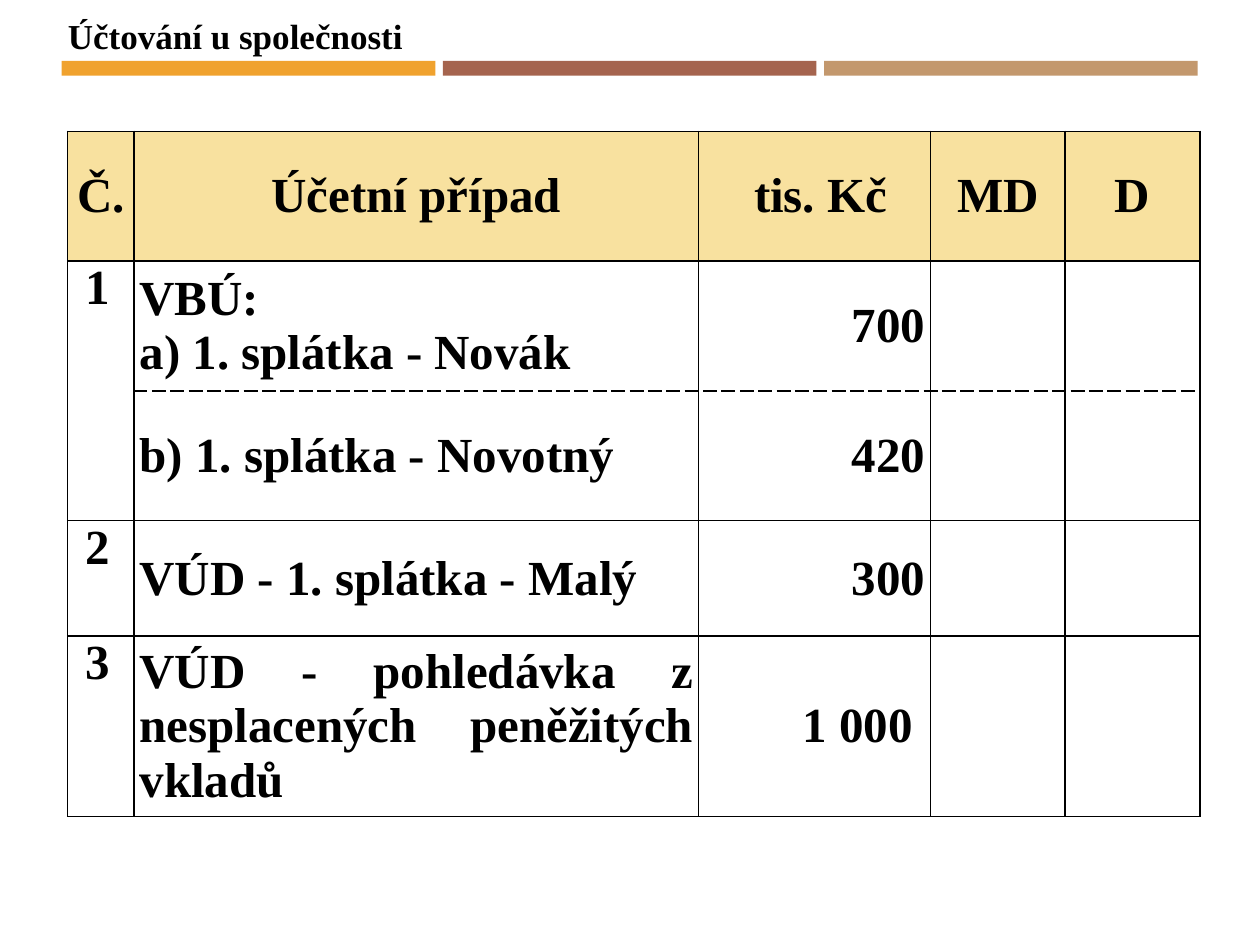
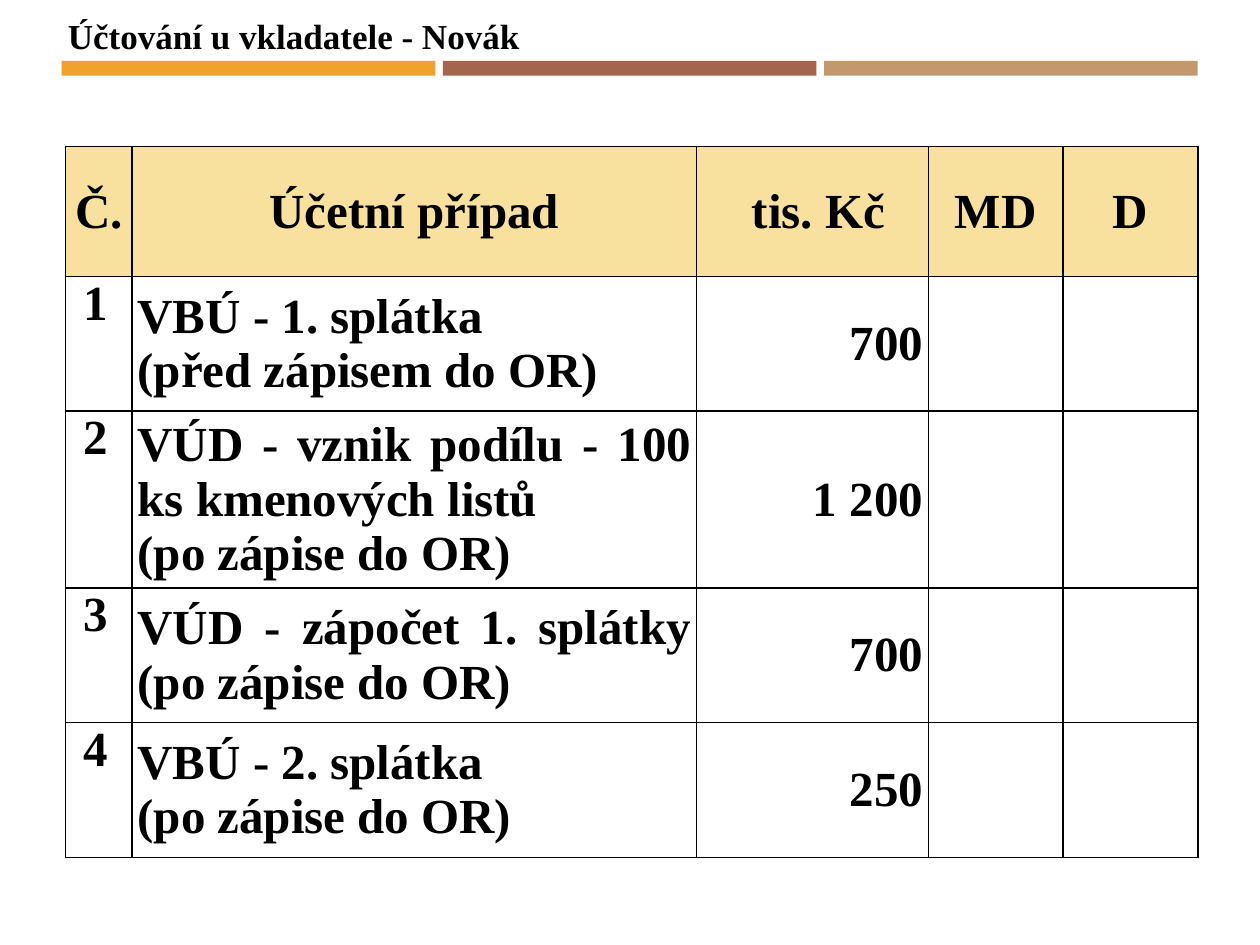
from lxml.etree import SubElement
from pptx import Presentation
from pptx.dml.color import RGBColor
from pptx.enum.shapes import MSO_SHAPE
from pptx.enum.text import MSO_ANCHOR, MSO_AUTO_SIZE, PP_ALIGN
from pptx.oxml.ns import qn
from pptx.util import Pt

BLACK = RGBColor(0x00, 0x00, 0x00)
HEADER_FILL = RGBColor(0xF8, 0xE1, 0x9F)
BAND_COLOURS = [
    RGBColor(0xF0, 0xA2, 0x2E),
    RGBColor(0xA5, 0x64, 0x4E),
    RGBColor(0xC3, 0x98, 0x6D),
]
BAND_LEFT, BAND_TOP, BAND_WIDTH, BAND_HEIGHT, BAND_PITCH = 35.3, 34.8, 213.5, 8.4, 217.8

HEADINGS = ["Č.", "Účetní případ", " tis. Kč", "MD", "D"]
COLUMN_WIDTHS = [38, 322.5, 132.5, 77, 77]
COLUMN_ALIGNMENTS = [PP_ALIGN.LEFT, PP_ALIGN.JUSTIFY, PP_ALIGN.RIGHT,
                     PP_ALIGN.CENTER, PP_ALIGN.CENTER]
HEADER_HEIGHT = 74.2
CELL_INSET = 3.1
NUMBER_INDENT = 10

# Each entry: row height, number, lines of the case, amount.
# An entry without a number continues the one above it.
COMPANY_ENTRIES = [
    (74.2, "1", ["VBÚ:", "a) 1. splátka - Novák"], "700"),
    (74.2, None, ["b) 1. splátka - Novotný"], "420"),
    (66, "2", ["VÚD - 1. splátka - Malý"], "300"),
    (103, "3", ["VÚD - pohledávka z nesplacených peněžitých vkladů"], "1 000 "),
]
INVESTOR_ENTRIES = [
    (77, "1", ["VBÚ - 1. splátka ", "(před zápisem do OR)"], "700"),
    (101, "2", ["VÚD - vznik podílu - 100 ks kmenových listů ", "(po zápise do OR)"], "1 200"),
    (77, "3", ["VÚD - zápočet 1. splátky (po zápise do OR)"], "700"),
    (77, "4", ["VBÚ - 2. splátka ", "(po zápise do OR)"], "250"),
]


def apply(target, values):
    for name, value in values.items():
        setattr(target, name, value)


class LedgerDeck:
    title_font = {"name": "Times New Roman", "size": Pt(20), "bold": True}
    table_font = {"name": "Times New Roman", "size": Pt(28), "bold": True}

    def __init__(self):
        self.deck = Presentation()
        apply(self.deck, {"slide_width": Pt(720), "slide_height": Pt(540)})
        self.page = None

    def add_page(self, title, title_width):
        self.page = self.deck.slides.add_slide(self.deck.slide_layouts[6])
        self.add_bands()
        self.add_title(title, title_width)

    def add_bands(self):
        for index, colour in enumerate(BAND_COLOURS):
            band = self.page.shapes.add_shape(
                MSO_SHAPE.RECTANGLE, Pt(BAND_LEFT + index * BAND_PITCH), Pt(BAND_TOP),
                Pt(BAND_WIDTH), Pt(BAND_HEIGHT))
            band.shadow.inherit = False
            band.fill.solid()
            band.fill.fore_color.rgb = colour
            band.line.fill.background()

    def add_title(self, title, width):
        box = self.page.shapes.add_textbox(Pt(31.7), Pt(5), Pt(width), Pt(31.5))
        apply(box.text_frame, {"word_wrap": False,
                               "auto_size": MSO_AUTO_SIZE.SHAPE_TO_FIT_TEXT})
        self.add_lines(box.text_frame, [title], PP_ALIGN.LEFT, self.title_font)

    def add_lines(self, frame, lines, alignment, font):
        for index, line in enumerate(lines):
            para = frame.add_paragraph() if index else frame.paragraphs[0]
            para.alignment = alignment
            span = para.add_run()
            span.text = line
            apply(span.font, font)
            span.font.color.rgb = BLACK

    def add_borders(self, cell, dashed_sides):
        properties = cell._tc.get_or_add_tcPr()
        for side in "LRTB":
            line = SubElement(properties, qn(f"a:ln{side}"), w=str(Pt(1)))
            fill = SubElement(line, qn("a:solidFill"))
            SubElement(fill, qn("a:srgbClr"), val=str(BLACK))
            SubElement(line, qn("a:prstDash"),
                       val="dash" if side in dashed_sides else "solid")

    def fill_cell(self, cell, lines, alignment, is_header=False, is_number=False,
                  dashed_sides=""):
        self.add_borders(cell, dashed_sides)
        if is_header:
            cell.fill.solid()
            cell.fill.fore_color.rgb = HEADER_FILL
        else:
            cell.fill.background()
        apply(cell, {
            "margin_left": Pt(NUMBER_INDENT if is_number else CELL_INSET),
            "margin_right": Pt(CELL_INSET), "margin_top": 0, "margin_bottom": 0,
            "vertical_anchor": MSO_ANCHOR.TOP if is_number else MSO_ANCHOR.MIDDLE,
        })
        self.add_lines(cell.text_frame, lines, alignment, self.table_font)

    def add_ledger(self, left, top, entries):
        heights = [HEADER_HEIGHT] + [entry[0] for entry in entries]
        table = self.page.shapes.add_table(
            len(heights), len(HEADINGS), Pt(left), Pt(top),
            Pt(sum(COLUMN_WIDTHS)), Pt(sum(heights))).table
        apply(table, {"first_row": False, "horz_banding": False})
        for column, width in zip(table.columns, COLUMN_WIDTHS):
            column.width = Pt(width)
        for row, height in zip(table.rows, heights):
            row.height = Pt(height)

        for column, heading in enumerate(HEADINGS):
            self.fill_cell(table.cell(0, column), [heading], PP_ALIGN.CENTER, is_header=True)

        continues = [number is None for _, number, _, _ in entries] + [False]
        for index, (_, number, case, amount) in enumerate(entries):
            row = index + 1
            dashed = "T" * continues[index] + "B" * continues[index + 1]
            contents = [[number] if number else [], case, [amount], [], []]
            for column, lines in enumerate(contents):
                is_number = column == 0
                self.fill_cell(table.cell(row, column), lines, COLUMN_ALIGNMENTS[column],
                               is_number=is_number,
                               dashed_sides="" if is_number else dashed)
            if continues[index]:
                table.cell(row - 1, 0).merge(table.cell(row, 0))


def main():
    ledger = LedgerDeck()
    ledger.add_page("Účtování u společnosti", 207.4)
    ledger.add_ledger(38.7, 75, COMPANY_ENTRIES)
    ledger.add_page("Účtování u vkladatele - Novák", 275)
    ledger.add_ledger(37.5, 83.8, INVESTOR_ENTRIES)
    ledger.deck.save("out.pptx")


if __name__ == "__main__":
    main()
